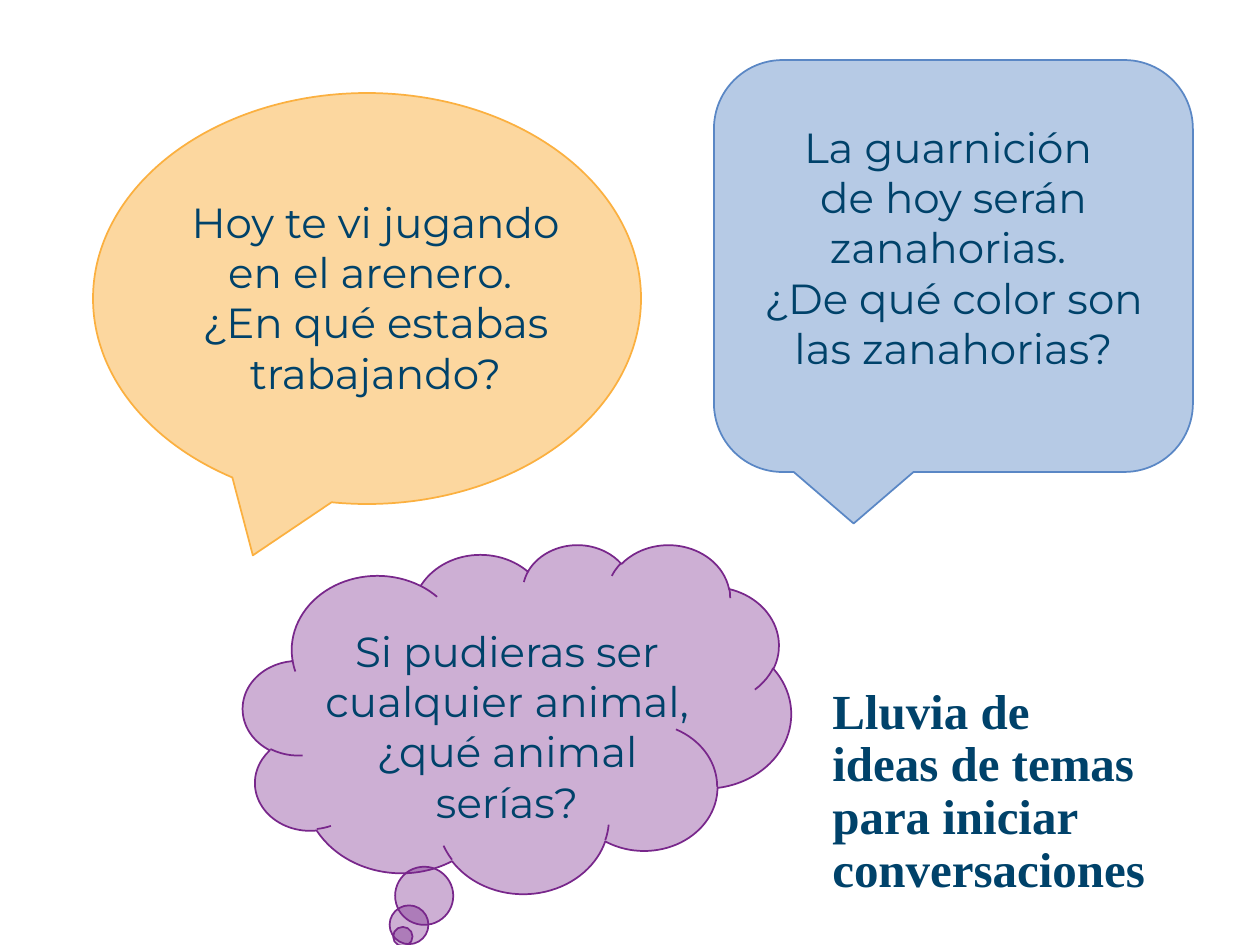
from pptx import Presentation
from pptx import util as u
from pptx.dml.color import RGBColor
from pptx.enum import shapes, text
from pptx.oxml.ns import qn
from lxml import etree

PX = 914400 / 126
NAVY = RGBColor(0x00, 0x42, 0x6A)
AMBER = RGBColor(0xFB, 0xB0, 0x40)
BLUE = RGBColor(0x5A, 0x87, 0xC5)
PURPLE = RGBColor(0x78, 0x27, 0x8B)


def px(*lengths):
    return [u.Emu(round(length * PX)) for length in lengths]


def add_text(slide, box, words, *, font, size, bold=False, align=text.PP_ALIGN.LEFT,
             anchor=text.MSO_ANCHOR.TOP, spacing=None):
    """Place wrapped text; a vertical tab in the words is a line break."""
    frame = slide.shapes.add_textbox(*px(*box)).text_frame
    frame.word_wrap = True
    frame.vertical_anchor = anchor
    paragraph = frame.paragraphs[0]
    paragraph.text = words
    paragraph.alignment = align
    paragraph.line_spacing = spacing
    for run in paragraph.runs:
        run.font.name = font
        run.font.size = u.Pt(size)
        run.font.bold = bold
        run.font.color.rgb = NAVY


def add_callout(slide, box, outline, color, opacity, words, words_box):
    """Draw a translucent bubble with its question, placed relative to the box."""
    bubble = slide.shapes.add_shape(outline, *px(*box))
    bubble.shadow.inherit = False
    bubble.fill.solid()
    bubble.fill.fore_color.rgb = color
    tint = bubble.fill._xPr.find(qn("a:solidFill"))[0]
    etree.SubElement(tint, qn("a:alpha"), val=str(opacity * 1000))
    bubble.line.color.rgb = color
    bubble.line.width = u.Pt(1)

    left, top = box[:2]
    dx, dy, width, height = words_box
    add_text(slide, (left + dx, top + dy, width, height), words,
             font="Montserrat", size=24, align=text.PP_ALIGN.CENTER)


def add_heading(slide, box):
    add_text(slide, box, "Lluvia de \videas de temas para iniciar conversaciones",
             font="Times New Roman", size=28, bold=True,
             anchor=text.MSO_ANCHOR.MIDDLE, spacing=0.9)


def main():
    deck = Presentation()
    deck.slide_width, deck.slide_height = px(1260, 945)
    slide = deck.slides.add_slide(deck.slide_layouts[6])
    kind = shapes.MSO_SHAPE

    # Conversation starters
    add_callout(slide, (93, 93, 548, 411), kind.OVAL_CALLOUT, AMBER, 50,
                "Hoy te vi jugando en el arenero. \v¿En qué estabas trabajando?",
                (76, 97, 413, 217))
    add_callout(slide, (714, 60, 479, 412), kind.ROUNDED_RECTANGULAR_CALLOUT, BLUE, 44,
                "La guarnición \vde hoy serán zanahorias. \v"
                "¿De qué color son las zanahorias?",
                (36, 55, 407, 267))
    add_callout(slide, (243, 544, 548, 349), kind.CLOUD_CALLOUT, PURPLE, 37,
                "Si pudieras ser cualquier animal, ¿qué animal serías?",
                (58, 75, 412, 217))

    # Heading
    add_heading(slide, (820, 701, 418, 183))

    deck.save("out.pptx")


if __name__ == "__main__":
    main()
